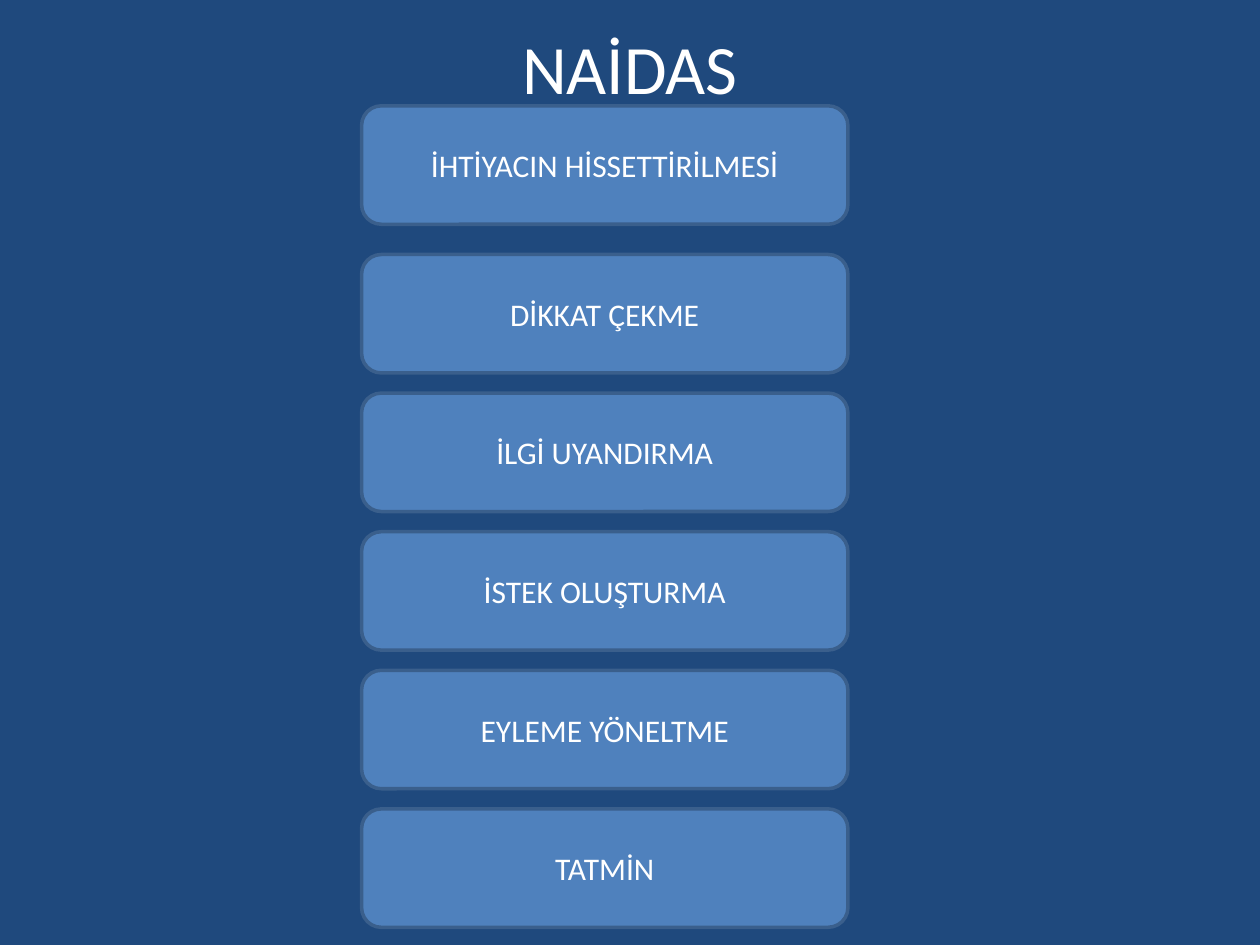
from pptx import Presentation
from pptx.dml.color import RGBColor
from pptx.enum.shapes import MSO_SHAPE
from pptx.enum.text import MSO_ANCHOR, PP_ALIGN
from pptx.util import Inches, Pt

FIRST = "İHTİYACIN HİSSETTİRİLMESİ"
STEPS = [
    "DİKKAT ÇEKME",
    "İLGİ UYANDIRMA",
    "İSTEK OLUŞTURMA",
    "EYLEME YÖNELTME",
    "TATMİN",
]


def paint(color, value):
    """Set a fill, line or font colour from a hex string."""
    color.rgb = RGBColor.from_string(value)


def write(shape, text, size=18, color="FFFFFF", font="Calibri"):
    """Put centred text into a shape."""
    frame = shape.text_frame
    frame.word_wrap = True
    frame.vertical_anchor = MSO_ANCHOR.MIDDLE
    para = frame.paragraphs[0]
    para.alignment = PP_ALIGN.CENTER
    run = para.add_run()
    run.text = text
    run.font.name = font
    run.font.size = Pt(size)
    paint(run.font.color, color)


def add_title(slide, text):
    """Place and fill the title."""
    title = slide.shapes.title
    title.left, title.top = Inches(0.5), Inches(0.3)
    title.width, title.height = Inches(9), Inches(0.46)
    write(title, text, size=39.6)


def add_step(slide, text, top):
    """Draw one rounded step box."""
    box = slide.shapes.add_shape(
        MSO_SHAPE.ROUNDED_RECTANGLE,
        Inches(2.87), Inches(top), Inches(3.86), Inches(0.94),
    )
    box.shadow.inherit = False
    box.fill.solid()
    paint(box.fill.fore_color, "4F81BD")
    paint(box.line.color, "3A5F8C")
    box.line.width = Pt(2)
    write(box, text)


def main():
    """Build the slide and save it."""
    deck = Presentation()
    deck.slide_width, deck.slide_height = Inches(10), Inches(7.5)
    slide = deck.slides.add_slide(deck.slide_layouts[5])
    fill = slide.background.fill
    fill.solid()
    paint(fill.fore_color, "1F497D")
    add_title(slide, "NAİDAS")
    add_step(slide, FIRST, 0.84)
    for row, text in enumerate(STEPS):
        add_step(slide, text, 2.02 + 1.1 * row)
    deck.save("out.pptx")


if __name__ == "__main__":
    main()
